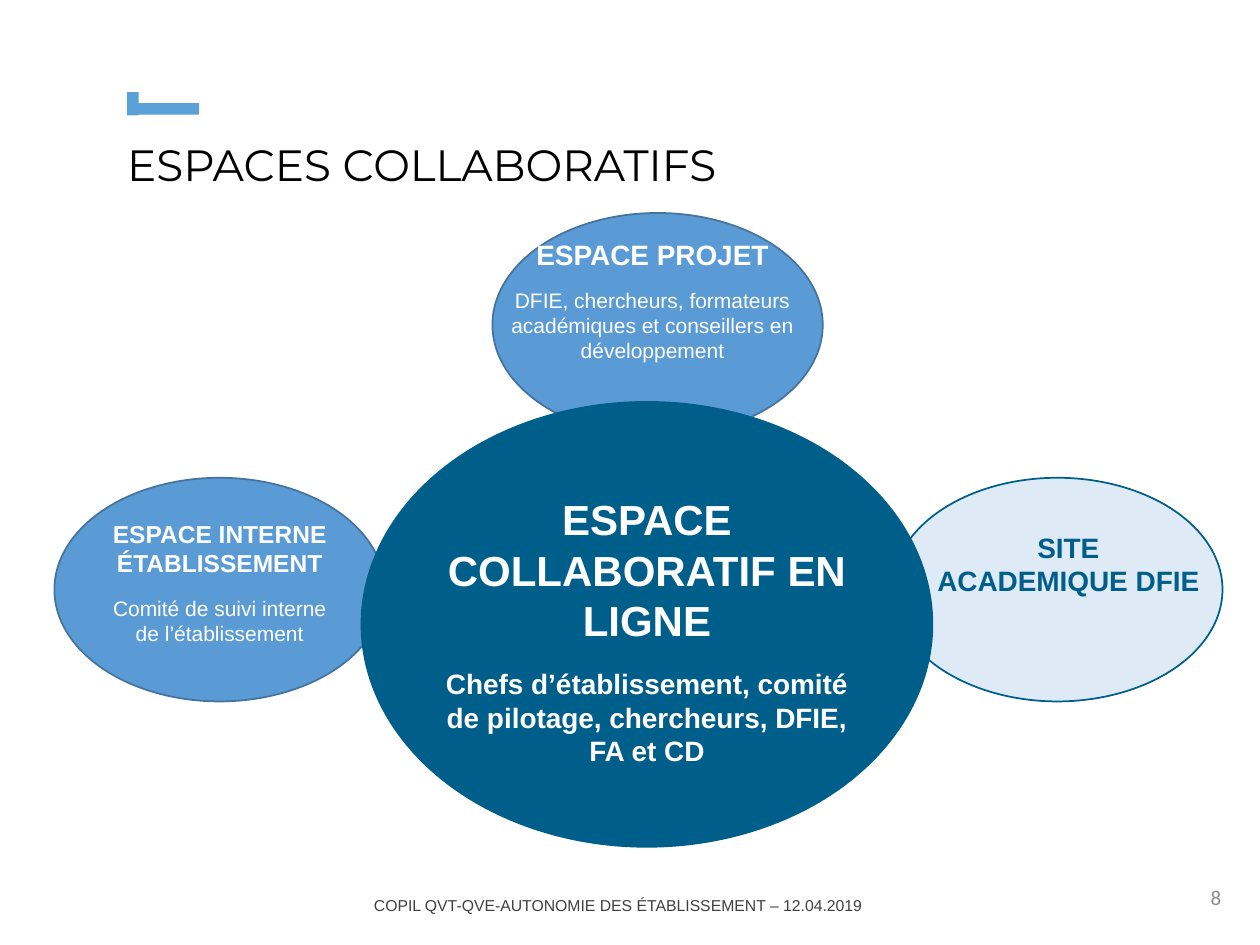
"""Build the slide on collaborative spaces around a central hub."""
import pptx
import pptx.dml.color
import pptx.enum.shapes
import pptx.enum.text
import pptx.util

Pt = pptx.util.Pt
Align = pptx.enum.text.PP_ALIGN
Anchor = pptx.enum.text.MSO_ANCHOR
Shape = pptx.enum.shapes.MSO_SHAPE

THEME = {
    "black": "000000", "white": "FFFFFF", "deep": "005E8B", "blue": "5B9BD5",
    "edge": "43739E", "pale": "DEEBF7", "mark": "5AA1D8", "grey": "8C8C8C",
    "dark": "404040", "title": 25, "number": 12, "footer": 9,
    "head": "Montserrat", "body": "Arial", "digit": "Calibri",
}

TITLE = "ESPACES COLLABORATIFS"
FOOTER = "COPIL QVT-QVE-AUTONOMIE DES ÉTABLISSEMENT – 12.04.2019"
NUMBER = "8"
MARKS = [(72.7, 52.6, 6.5, 13.4), (75.6, 59, 38.2, 6.6)]
SMALL = (188.8, 127.8)
SPACES = [
    {"at": (509.8, 273), "size": SMALL, "fill": "pale", "line": "deep", "ink": "deep",
     "box": (476.6, 299.5, 267.8, 46),
     "text": [("SITE", 16, True, 0), ("ACADEMIQUE DFIE", 16, True, 0)]},
    {"at": (281.4, 121.7), "size": SMALL, "fill": "blue", "line": "edge", "ink": "white",
     "box": (282.2, 132.5, 181.4, 80),
     "text": [("ESPACE PROJET", 16, True, 0),
              ("DFIE, chercheurs, formateurs académiques et conseillers en développement",
               12, False, 9)]},
    {"at": (31.1, 273), "size": SMALL, "fill": "blue", "line": "edge", "ink": "white",
     "box": (54.7, 293, 141.8, 81.4),
     "text": [("ESPACE INTERNE ÉTABLISSEMENT", 14, True, 0),
              ("Comité de suivi interne de l’établissement", 12, False, 10)]},
    {"at": (206.6, 229.7), "size": (326.2, 254.2), "fill": "deep", "line": "deep",
     "ink": "white", "box": (239, 278.6, 261.4, 166.3),
     "text": [("ESPACE COLLABORATIF EN LIGNE", 24, True, 0),
              ("Chefs d’établissement, comité de pilotage, chercheurs, DFIE, FA et CD",
               16, True, 12.5)]},
]


def tint(name):
    return pptx.dml.color.RGBColor.from_string(THEME[name])


def style(para, face, size, ink, bold=False, align=Align.LEFT):
    para.alignment = align
    font = para.font
    font.name, font.size, font.bold = THEME[face], Pt(size), bold
    font.color.rgb = tint(ink)


def draw(slide, kind, area, fill, line=None):
    shape = slide.shapes.add_shape(kind, *map(Pt, area))
    shape.shadow.inherit = False
    shape.fill.solid()
    shape.fill.fore_color.rgb = tint(fill)
    if line:
        shape.line.color.rgb = tint(line)
        shape.line.width = Pt(1)
    else:
        shape.line.fill.background()


def write(slide, area, anchor=Anchor.TOP):
    frame = slide.shapes.add_textbox(*map(Pt, area)).text_frame
    frame.word_wrap = True
    frame.vertical_anchor = anchor
    return frame


def head(slide):
    title = slide.shapes.title
    title.left, title.top, title.width, title.height = map(Pt, (65.5, 78.5, 620.6, 67))
    frame = title.text_frame
    frame.text = TITLE
    frame.auto_size = pptx.enum.text.MSO_AUTO_SIZE.NONE
    frame.vertical_anchor = Anchor.TOP
    para = frame.paragraphs[0]
    para.line_spacing = 0.9
    style(para, "head", THEME["title"], "black")
    for area in MARKS:
        draw(slide, Shape.RECTANGLE, area, "mark")


def foot(slide):
    frame = write(slide, (542.9, 498.2, 162, 28.8), Anchor.MIDDLE)
    frame.text = NUMBER
    style(frame.paragraphs[0], "digit", THEME["number"], "grey", align=Align.RIGHT)
    frame = write(slide, (206.6, 504.7, 297.4, 22.3), Anchor.MIDDLE)
    frame.text = FOOTER
    para = frame.paragraphs[0]
    para.line_spacing = Pt(13.2)
    style(para, "body", THEME["footer"], "dark")


def place(slide, space):
    draw(slide, Shape.OVAL, space["at"] + space["size"], space["fill"], space["line"])
    frame = write(slide, space["box"])
    frame.text = "\n".join(item[0] for item in space["text"])
    for para, (_, size, bold, gap) in zip(frame.paragraphs, space["text"]):
        para.space_before = Pt(gap)
        style(para, "body", size, space["ink"], bold, Align.CENTER)


def main():
    deck = pptx.Presentation()
    deck.slide_width, deck.slide_height = Pt(720), Pt(540)
    slide = deck.slides.add_slide(deck.slide_layouts[5])
    head(slide)
    foot(slide)
    for space in SPACES:
        place(slide, space)
    deck.save("out.pptx")


if __name__ == "__main__":
    main()
